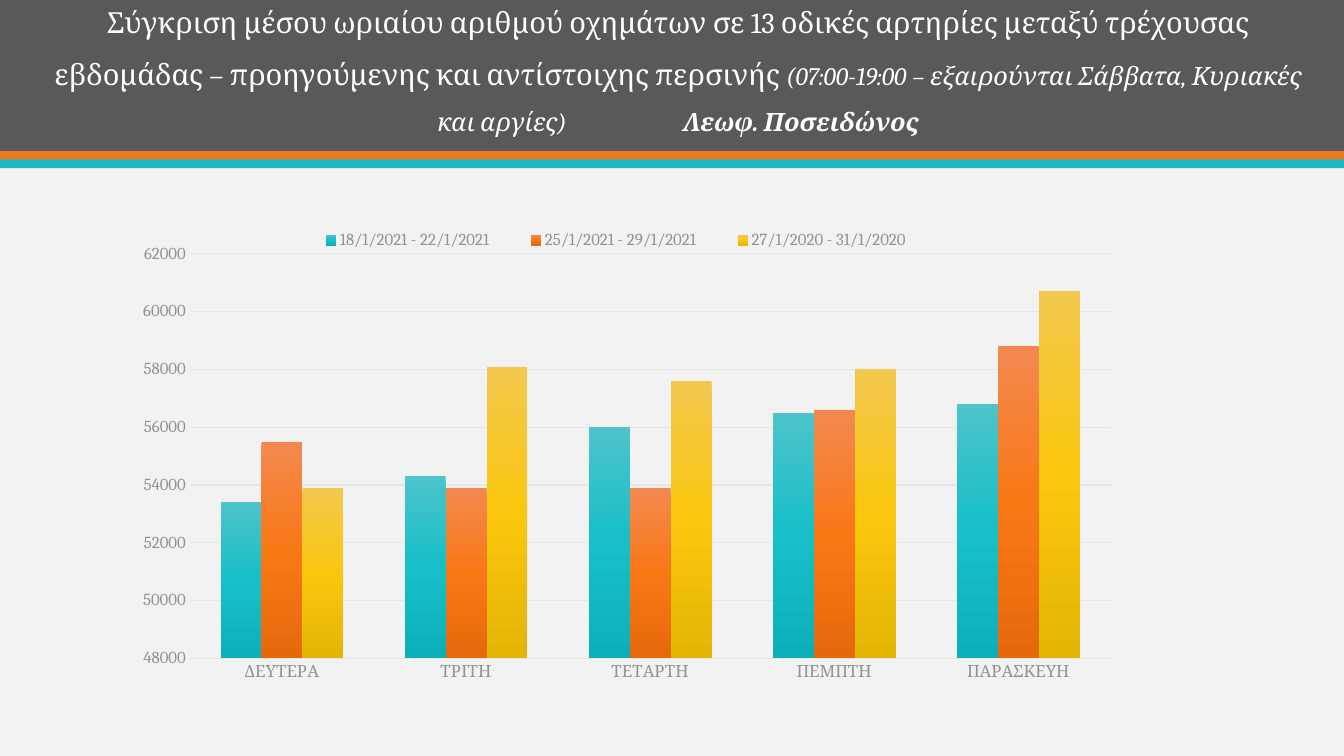
import copy
import pptx
import pptx.chart.data
import pptx.dml.color
import pptx.enum.chart
import pptx.enum.shapes
import pptx.enum.text
import pptx.oxml
import pptx.oxml.ns
import pptx.util

Cm, Pt = pptx.util.Cm, pptx.util.Pt
Rgb = pptx.dml.color.RGBColor.from_string


class Theme:
    font = "Cambria"
    back, head, warm, cool = "F2F2F2", "595959", "EF7920", "1EB8C1"
    white, label, grid = "FFFFFF", "939393", "E6E6E6"
    fades = [
        ("4EC3CB", "16BFC9", "0CB0BA"),
        ("F38950", "F97816", "E5690C"),
        ("F3C84E", "FAC70E", "E5B506"),
    ]
    big, note, tick = 20.7, 18, 12


def style(font, size, color):
    font.name = Theme.font
    font.size = Pt(size)
    font.color.rgb = Rgb(color)


def place(parent, index, x, y, w, h, inner=False):
    """Give a chart part a fixed place, in fractions of the chart."""
    for old in parent.findall(pptx.oxml.ns.qn("c:layout")):
        parent.remove(old)
    target = '<c:layoutTarget val="inner"/>' if inner else ""
    parent.insert(index, pptx.oxml.parse_xml(
        f'<c:layout {pptx.oxml.ns.nsdecls("c")}><c:manualLayout>{target}'
        '<c:xMode val="edge"/><c:yMode val="edge"/>'
        f'<c:x val="{x}"/><c:y val="{y}"/><c:w val="{w}"/><c:h val="{h}"/>'
        '</c:manualLayout></c:layout>'))


deck = pptx.Presentation()
deck.slide_width, deck.slide_height = Cm(33.87), Cm(19.05)
slide = deck.slides.add_slide(deck.slide_layouts[5])
slide.background.fill.solid()
slide.background.fill.fore_color.rgb = Rgb(Theme.back)

# Header bands
bands = [(0, 3.81, Theme.head), (3.81, 0.22, Theme.warm), (4.02, 0.22, Theme.cool)]
for top, high, color in bands:
    band = slide.shapes.add_shape(
        pptx.enum.shapes.MSO_SHAPE.RECTANGLE, 0, Cm(top), deck.slide_width, Cm(high))
    band.shadow.inherit = False
    band.fill.solid()
    band.fill.fore_color.rgb = Rgb(color)
    band.line.fill.background()

# Title, in front of the bands
title = slide.shapes.title
title.element.getparent().append(title.element)
title.left, title.top = Cm(0.81), Cm(0.71)
title.width, title.height = Cm(32.56), Cm(2.87)
frame = title.text_frame
frame.word_wrap = True
frame.auto_size = pptx.enum.text.MSO_AUTO_SIZE.NONE
frame.vertical_anchor = pptx.enum.text.MSO_ANCHOR.BOTTOM
para = frame.paragraphs[0]
para.alignment = pptx.enum.text.PP_ALIGN.CENTER
para.line_spacing = 1.5
runs = [
    ("Σύγκριση μέσου ωριαίου αριθμού οχημάτων σε 13 οδικές αρτηρίες μεταξύ "
     "τρέχουσας εβδομάδας – προηγούμενης και αντίστοιχης περσινής ",
     Theme.big, False, False, 0),
    ("(07:00-19:00 – εξαιρούνται Σάββατα, Κυριακές και αργίες)",
     Theme.note, True, False, 0),
    (" ", Theme.note, True, False, 79),
    ("Λεωφ. Ποσειδώνος", Theme.note, True, True, 0),
]
for text, size, italic, bold, gap in runs:
    run = para.add_run()
    run.text = text
    style(run.font, size, Theme.white)
    run.font.italic, run.font.bold = italic, bold
    if gap:
        run.font._element.set("spc", str(gap * 100))

# Chart
data = pptx.chart.data.CategoryChartData(number_format="0")
data.categories = ["ΔΕΥΤΕΡΑ", "ΤΡΙΤΗ", "ΤΕΤΑΡΤΗ", "ΠΕΜΠΤΗ", "ΠΑΡΑΣΚΕΥΗ"]
data.add_series("18/1/2021 - 22/1/2021", [53400, 54300, 56000, 56500, 56800])
data.add_series("25/1/2021 - 29/1/2021", [55500, 53900, 53900, 56600, 58800])
data.add_series("27/1/2020 - 31/1/2020", [53900, 58100, 57600, 58000, 60700])
chart = slide.shapes.add_chart(
    pptx.enum.chart.XL_CHART_TYPE.COLUMN_CLUSTERED,
    Cm(3.2), Cm(5.44), Cm(29.34), Cm(12.27), data).chart
chart.has_title = False
style(chart.font, Theme.tick, Theme.label)

plot = chart.plots[0]
plot.vary_by_categories = False
plot.gap_width, plot.overlap = 150, 0
for series, fade in zip(plot.series, Theme.fades):
    fill = series.format.fill
    fill.gradient()
    fill.gradient_angle = 270
    stops = chart.element.xpath(".//c:ser//a:gsLst")[-1]
    stops.append(copy.deepcopy(stops[0]))
    for stop, color, spot in zip(fill.gradient_stops, fade, (0, 0.5, 1)):
        stop.color.rgb = Rgb(color)
        stop.position = spot

days, count = chart.category_axis, chart.value_axis
for axis in (days, count):
    axis.major_tick_mark = axis.minor_tick_mark = pptx.enum.chart.XL_TICK_MARK.NONE
    style(axis.tick_labels.font, Theme.tick, Theme.label)
days.format.line.color.rgb = Rgb(Theme.grid)
days.format.line.width = Pt(1)
count.format.line.fill.background()
count.minimum_scale, count.maximum_scale, count.major_unit = 48000, 62000, 2000
count.tick_labels.number_format = "0"
count.tick_labels.number_format_is_linked = False
count.has_major_gridlines = True
count.major_gridlines.format.line.color.rgb = Rgb(Theme.grid)
count.major_gridlines.format.line.width = Pt(0.75)

chart.has_legend = True
chart.legend.position = pptx.enum.chart.XL_LEGEND_POSITION.BOTTOM
chart.legend.include_in_layout = False
style(chart.legend.font, Theme.tick, Theme.label)
place(chart.element.xpath(".//c:plotArea")[0], 0, 0.054, 0.078, 0.791, 0.831, True)
place(chart.element.xpath(".//c:legend")[0], 1, 0.14, 0.02, 0.56, 0.06)

deck.save("out.pptx")
